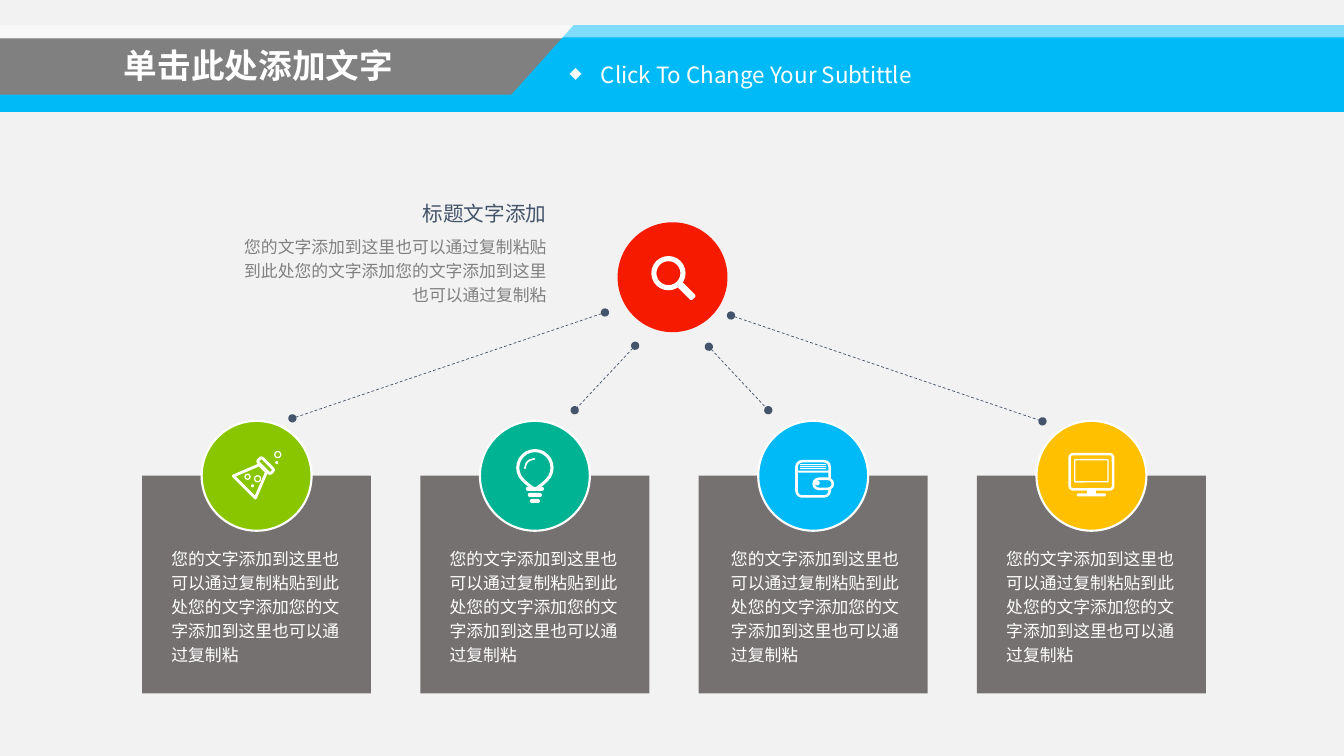
from dataclasses import dataclass
from lxml import etree
from pptx import Presentation
from pptx.dml.color import RGBColor
from pptx.enum.dml import MSO_LINE
from pptx.enum.shapes import MSO_CONNECTOR, MSO_SHAPE
from pptx.enum.text import MSO_ANCHOR, MSO_AUTO_SIZE, PP_ALIGN
from pptx.oxml.ns import qn
from pptx.util import Inches, Pt

RECT, OVAL, ROUND = MSO_SHAPE.RECTANGLE, MSO_SHAPE.OVAL, MSO_SHAPE.ROUNDED_RECTANGLE
RING, TEAR, ARC, CONE = MSO_SHAPE.DONUT, MSO_SHAPE.TEAR, MSO_SHAPE.ARC, MSO_SHAPE.TRAPEZOID
LINE, DASH = MSO_CONNECTOR.STRAIGHT, MSO_LINE.DASH
LEFT, RIGHT = PP_ALIGN.LEFT, PP_ALIGN.RIGHT
TOP, MIDDLE = MSO_ANCHOR.TOP, MSO_ANCHOR.MIDDLE
GROW, FIXED = MSO_AUTO_SIZE.SHAPE_TO_FIT_TEXT, MSO_AUTO_SIZE.NONE

HUES = {"page": "F2F2F2", "blue": "00BAF7", "gray": "808080", "card": "767171",
        "navy": "44546A", "white": "FFFFFF", "green": "89C600", "teal": "00B393",
        "red": "F61A00", "gold": "FFC000"}
SANS = "Noto Sans CJK SC"
BODY = "您的文字添加到这里也可以通过复制粘贴到此处您的文字添加您的文字添加到这里也可以通过复制粘"

WIDE, HIGH = 13.33, 7.5
DISC = 1.09
CARD_X, CARD_Y, CARD_W, CARD_H, CARD_STEP = 1.41, 4.72, 2.27, 2.16, 2.76
HUB_X, HUB_Y = 6.67, 2.75

Box = tuple[float, float, float, float]


@dataclass
class Mark:
    """One part of an icon, placed by its centre from the middle of the disc."""
    kind: int
    dx: float
    dy: float
    width: float
    height: float
    line: float = 0
    fill: str | None = None
    bend: float | None = None
    turn: float = 0


@dataclass
class Card:
    hue: str
    inset: float
    icon: list[Mark]


@dataclass
class Label:
    text: str
    box: Box
    font: dict
    para: dict
    frame: dict
    pads: tuple[float, float] = (0.1, 0.05)


def dot(dx: float, dy: float, size: float, line: float = 0) -> Mark:
    return Mark(OVAL, dx, dy, size, size, line)


LENS = [Mark(RING, -0.04, -0.04, 0.34, 0.34, bend=0.15),
        Mark(ROUND, 0.14, 0.14, 0.2, 0.07, bend=0.3, turn=45)]

FLASK = [Mark(CONE, -0.03, 0.02, 0.31, 0.26, 2, bend=0.4, turn=45),
         Mark(ROUND, 0.09, -0.1, 0.18, 0.06, 2, bend=0.3, turn=45),
         dot(0.01, 0.03, 0.06, 0.9), dot(-0.09, 0.01, 0.05, 0.9), dot(0.21, -0.21, 0.06, 0.9),
         dot(-0.04, 0.1, 0.03), dot(0.2, -0.13, 0.03)]

BULB = [Mark(TEAR, 0, -0.08, 0.34, 0.34, 2.2, bend=0.9, turn=135),
        Mark(ARC, 0, -0.07, 0.2, 0.2, 1.2, turn=270),
        *[Mark(ROUND, 0, 0.13 + 0.06 * i, 0.18 - 0.04 * i, 0.04, bend=0.5) for i in range(3)]]

PURSE = [Mark(ROUND, 0, 0.03, 0.33, 0.35, 1.8, bend=0.17),
         *[Mark(RECT, 0, -0.11 + 0.02 * i, 0.26, 0.01) for i in range(3)],
         Mark(RECT, 0, -0.04, 0.33, 0.02),
         Mark(ROUND, 0.1, 0.08, 0.19, 0.1, 1.8, "blue", 0.5), dot(0.04, 0.07, 0.05)]

SCREEN = [Mark(ROUND, 0, -0.04, 0.43, 0.35, 1.8, bend=0.09),
          Mark(ROUND, 0, -0.05, 0.33, 0.22, 1, bend=0.04),
          Mark(RECT, 0, 0.16, 0.09, 0.06), Mark(ROUND, 0, 0.19, 0.29, 0.03, bend=0.5)]

CARDS = [Card("green", 0.29, FLASK), Card("teal", 0.29, BULB),
         Card("blue", 0.32, PURSE), Card("gold", 0.29, SCREEN)]

LINKS = [(6, 3.1, 2.9, 4.15), (7.25, 3.13, 10.34, 4.18),
         (6.3, 3.43, 5.7, 4.07), (7.03, 3.44, 7.62, 4.07)]

SMALL = {"name": SANS, "size": Pt(12)}
FLOW = {"auto_size": GROW, "vertical_anchor": TOP}
LABELS = [
    Label(BODY, (2.3, 2.26, 3.22, 0.83), {**SMALL, "hue": "gray"},
          {"alignment": RIGHT, "line_spacing": 1.2}, FLOW),
    Label("标题文字添加", (1.85, 1.94, 3.67, 0.35),
          {"name": SANS, "size": Pt(14.7), "hue": "navy"}, {"alignment": RIGHT}, FLOW),
    Label("单击此处添加文字", (1.16, 0.42, 3.77, 0.47),
          {"name": "Lato", "size": Pt(24), "bold": True, "hue": "white"},
          {"alignment": LEFT}, FLOW, (0.07, 0.03)),
]
TAGLINE = Label("Click To Change Your Subtittle", (5.49, 0.5, 6.37, 0.46),
                {"name": SANS, "size": Pt(16), "hue": "white"},
                {"alignment": LEFT, "line_spacing": 1.1},
                {"auto_size": FIXED, "vertical_anchor": MIDDLE}, (0.16, 0.08))


def tint(name: str) -> RGBColor:
    return RGBColor.from_string(HUES[name])


def paint(shape, fill: str | None, line: str | None = None, width: float = 0) -> None:
    shape.shadow.inherit = False
    if fill:
        shape.fill.solid()
        shape.fill.fore_color.rgb = tint(fill)
    else:
        shape.fill.background()
    if line:
        shape.line.color.rgb = tint(line)
        shape.line.width = Pt(width)
    else:
        shape.line.fill.background()


def block(slide, kind: int, box: Box, fill: str | None, line: str | None = None, width: float = 0):
    shape = slide.shapes.add_shape(kind, *map(Inches, box))
    paint(shape, fill, line, width)
    return shape


def badge(slide, x: float, y: float, hue: str, icon: list[Mark], rim: float = 0) -> None:
    disc = (x - DISC / 2, y - DISC / 2, DISC, DISC)
    block(slide, OVAL, disc, hue, "white" if rim else None, rim)
    for mark in icon:
        box = (x + mark.dx - mark.width / 2, y + mark.dy - mark.height / 2, mark.width, mark.height)
        fill, line = (mark.fill, "white") if mark.line else ("white", None)
        part = block(slide, mark.kind, box, fill, line, mark.line)
        part.rotation = mark.turn
        if mark.bend is not None:
            part.adjustments[0] = mark.bend


def link(slide, ends: Box) -> None:
    wire = slide.shapes.add_connector(LINE, *map(Inches, ends))
    for key, val in {"width": Pt(0.5), "dash_style": DASH}.items():
        setattr(wire.line, key, val)
    wire.line.color.rgb = tint("navy")
    for tag in ("a:headEnd", "a:tailEnd"):
        etree.SubElement(wire.line._ln, qn(tag), type="oval")
    etree.SubElement(wire._element.spPr, qn("a:effectLst"))


def write(slide, label: Label):
    frame = slide.shapes.add_textbox(*map(Inches, label.box)).text_frame
    side, edge = map(Inches, label.pads)
    pads = {"margin_left": side, "margin_right": side, "margin_top": edge, "margin_bottom": edge}
    para = frame.paragraphs[0]
    run = para.add_run()
    run.text = label.text
    font = {key: val for key, val in label.font.items() if key != "hue"}
    for item, looks in ((frame, {"word_wrap": True, **pads, **label.frame}),
                        (para, label.para), (run.font, font)):
        for key, val in looks.items():
            setattr(item, key, val)
    run.font.color.rgb = tint(label.font["hue"])
    etree.SubElement(run._r.get_or_add_rPr(), qn("a:ea"), typeface=SANS)
    return para


def banner(slide) -> None:
    block(slide, RECT, (0, 0.56, WIDE, 0.55), "blue")
    block(slide, RECT, (0, 0.38, WIDE, 0.56), "gray")
    pen = slide.shapes.build_freeform(Inches(5.69), Inches(0.25))
    corners = [(WIDE, 0.25), (WIDE, 1.11), (4.92, 1.11)]
    pen.add_line_segments([(Inches(x), Inches(y)) for x, y in corners], close=True)
    paint(pen.convert_to_shape(), "blue")
    sheen = block(slide, RECT, (0, 0.25, WIDE, 0.12), "white")
    shade = sheen._element.spPr.find(qn("a:solidFill"))[0]
    etree.SubElement(shade, qn("a:alpha"), val="50000")


def bullet(para) -> None:
    props = para._p.get_or_add_pPr()
    props.set("marL", str(Inches(0.31)))
    props.set("indent", str(Inches(-0.31)))
    etree.SubElement(props, qn("a:buSzPct"), val="70000")
    etree.SubElement(props, qn("a:buChar"), char="◆")


def main() -> None:
    deck = Presentation()
    deck.slide_width, deck.slide_height = Inches(WIDE), Inches(HIGH)
    slide = deck.slides.add_slide(deck.slide_layouts[6])
    slide.background.fill.solid()
    slide.background.fill.fore_color.rgb = tint("page")

    banner(slide)
    for i, card in enumerate(CARDS):
        x = CARD_X + CARD_STEP * i
        block(slide, RECT, (x, CARD_Y, CARD_W, CARD_H), "card")
        badge(slide, x + CARD_W / 2, CARD_Y, card.hue, card.icon, 1.5)
        write(slide, Label(BODY, (x + card.inset, 5.4, 1.68, 1.21), {**SMALL, "hue": "white"},
                           {"alignment": LEFT, "line_spacing": 1.2}, FLOW, (0, 0)))
    badge(slide, HUB_X, HUB_Y, "red", LENS)
    for ends in LINKS:
        link(slide, ends)
    for label in LABELS:
        write(slide, label)
    bullet(write(slide, TAGLINE))
    deck.save("out.pptx")


if __name__ == "__main__":
    main()
